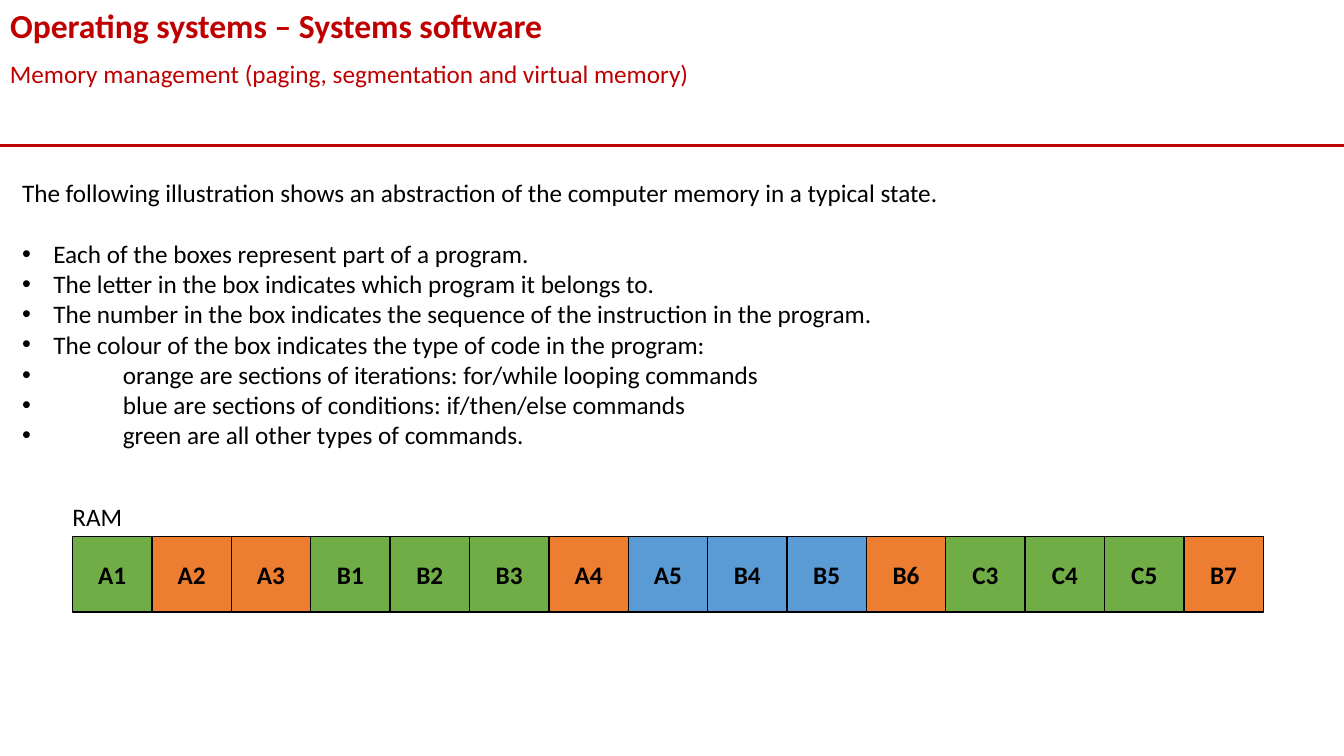
from dataclasses import dataclass

from lxml import etree
from pptx import Presentation
from pptx.dml.color import RGBColor
from pptx.enum.shapes import MSO_CONNECTOR, MSO_SHAPE
from pptx.enum.text import MSO_ANCHOR, MSO_AUTO_SIZE, PP_ALIGN
from pptx.oxml.ns import qn
from pptx.util import Inches, Pt

STRAIGHT = MSO_CONNECTOR.STRAIGHT
RECTANGLE = MSO_SHAPE.RECTANGLE
TOP, MIDDLE = MSO_ANCHOR.TOP, MSO_ANCHOR.MIDDLE
LEFT, CENTER = PP_ALIGN.LEFT, PP_ALIGN.CENTER
GROW = MSO_AUTO_SIZE.SHAPE_TO_FIT_TEXT
TITLE_ONLY = 5
SLIDE_WIDTH, SLIDE_HEIGHT = 13.33, 7.5


@dataclass(frozen=True)
class Theme:
    font: str = "Calibri"
    title_size: int = 24
    body_size: int = 18
    accent: str = "C00000"
    ink: str = "000000"
    iteration: str = "ED7D31"
    condition: str = "5B9BD5"
    other: str = "70AD47"


THEME = Theme()

INTRO = ("The following illustration shows an abstraction of the computer "
         "memory in a typical state.")
# Each point is paired with the distance from its bullet to its text.
POINTS = [
    ("Each of the boxes represent part of a program.", 0.31),
    ("The letter in the box indicates which program it belongs to.", 0.31),
    ("The number in the box indicates the sequence of the instruction in the program.", 0.31),
    ("The colour of the box indicates the type of code in the program:", 0.31),
    ("orange are sections of iterations: for/while looping commands", 1),
    ("blue are sections of conditions: if/then/else commands", 1),
    ("green are all other types of commands.", 1),
]
MEMORY = [
    ("A1", THEME.other), ("A2", THEME.iteration), ("A3", THEME.iteration),
    ("B1", THEME.other), ("B2", THEME.other), ("B3", THEME.other),
    ("A4", THEME.iteration), ("A5", THEME.condition), ("B4", THEME.condition),
    ("B5", THEME.condition), ("B6", THEME.iteration), ("C3", THEME.other),
    ("C4", THEME.other), ("C5", THEME.other), ("B7", THEME.iteration),
]


def style(paragraph, color=THEME.ink, size=THEME.body_size, bold=False, align=LEFT):
    paragraph.alignment = align
    font = paragraph.font
    font.name, font.size, font.bold = THEME.font, Pt(size), bold
    font.color.rgb = RGBColor.from_string(color)


def add_bullet(paragraph, hang):
    """Put a bullet at the left edge and the text `hang` inches after it."""
    properties = paragraph._p.get_or_add_pPr()
    properties.set("marL", str(Inches(hang)))
    properties.set("indent", str(-Inches(hang)))
    etree.SubElement(properties, qn("a:buFont")).set("typeface", "Arial")
    etree.SubElement(properties, qn("a:buChar")).set("char", "•")


def add_text(slide, text, left, top, width, height, color=THEME.ink, wrap=True):
    frame = slide.shapes.add_textbox(
        Inches(left), Inches(top), Inches(width), Inches(height)).text_frame
    frame.word_wrap, frame.auto_size = wrap, GROW
    frame.text = text
    style(frame.paragraphs[0], color)
    return frame


def add_header(slide, left, top, width, height):
    """Title, subtitle and a rule along the bottom of the box."""
    title = slide.shapes.title
    title.left, title.top = Inches(left), Inches(top)
    title.width, title.height = Inches(width), Inches(0.5)
    frame = title.text_frame
    frame.text = "Operating systems – Systems software"
    frame.vertical_anchor, frame.word_wrap, frame.auto_size = TOP, True, GROW
    style(frame.paragraphs[0], THEME.accent, THEME.title_size, bold=True)

    add_text(slide, "Memory management (paging, segmentation and virtual memory)",
             left, top + 0.53, width, 0.4, THEME.accent)

    rule_y = Inches(top + height)
    rule = slide.shapes.add_connector(
        STRAIGHT, Inches(left), rule_y, Inches(left + width), rule_y)
    rule.line.color.rgb = RGBColor.from_string(THEME.accent)
    rule.line.width = Pt(2.25)
    etree.SubElement(rule._element.spPr, qn("a:effectLst"))


def add_explanation(slide, left, top, width, height):
    frame = add_text(slide, INTRO, left, top, width, height)
    frame.paragraphs[0].space_after = Pt(22)
    for point, hang in POINTS:
        paragraph = frame.add_paragraph()
        paragraph.text = point
        add_bullet(paragraph, hang)
        style(paragraph)


def add_memory(slide, left, top, width, height):
    """RAM label above a row of equal cells that fills the box."""
    label_height = 0.4
    add_text(slide, "RAM", left - 0.1, top, 0.7, label_height, wrap=False)
    cell_width = width / len(MEMORY)
    for index, (section, color) in enumerate(MEMORY):
        cell = slide.shapes.add_shape(
            RECTANGLE, Inches(left + index * cell_width), Inches(top + label_height),
            Inches(cell_width), Inches(height - label_height))
        cell.shadow.inherit = False
        cell.fill.solid()
        cell.fill.fore_color.rgb = RGBColor.from_string(color)
        cell.line.color.rgb = RGBColor.from_string(THEME.ink)
        cell.line.width = Pt(1)
        cell.text_frame.text = section
        cell.text_frame.vertical_anchor = MIDDLE
        style(cell.text_frame.paragraphs[0], bold=True, align=CENTER)


def main():
    presentation = Presentation()
    presentation.slide_width = Inches(SLIDE_WIDTH)
    presentation.slide_height = Inches(SLIDE_HEIGHT)
    slide = presentation.slides.add_slide(presentation.slide_layouts[TITLE_ONLY])
    add_header(slide, 0, 0, SLIDE_WIDTH, 1.44)
    add_explanation(slide, 0.12, 1.71, 11.99, 2.83)
    add_memory(slide, 0.72, 4.92, 11.81, 1.15)
    presentation.save("out.pptx")


if __name__ == "__main__":
    main()
